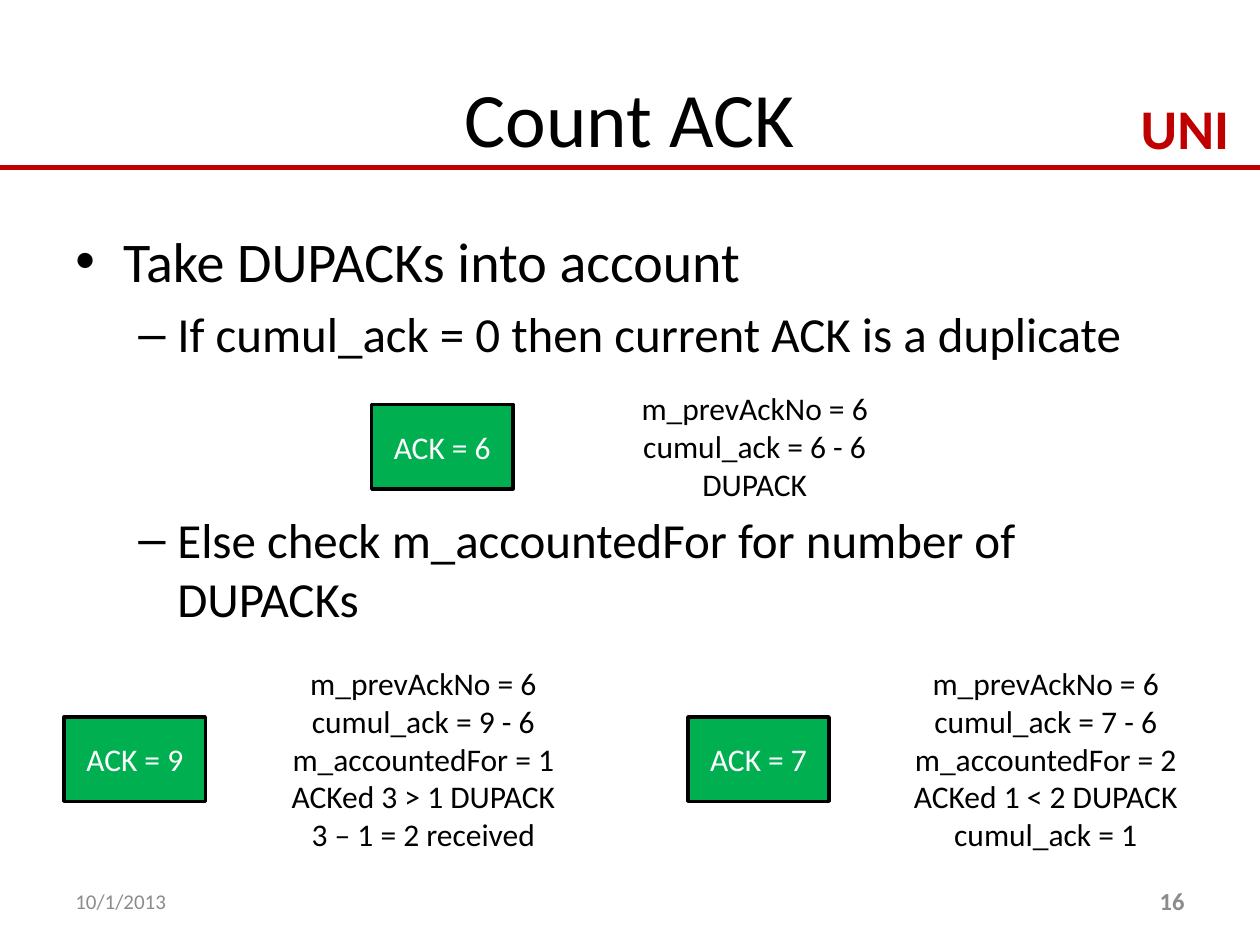
from dataclasses import dataclass

from lxml.etree import SubElement
from pptx import Presentation
from pptx.dml.color import RGBColor
from pptx.enum.shapes import MSO_CONNECTOR, MSO_SHAPE
from pptx.enum.text import MSO_ANCHOR, PP_ALIGN
from pptx.oxml.ns import qn
from pptx.util import Inches, Pt

FONT = "Calibri"
BLACK, WHITE, RED, GREEN, GRAY = "000000", "FFFFFF", "C00000", "00B050", "8C8C8C"


@dataclass
class Label:
    lines: list[str]
    left: float
    top: float
    width: float
    height: float
    size: int
    color: str = BLACK
    bold: bool = False
    align: PP_ALIGN = PP_ALIGN.CENTER
    anchor: MSO_ANCHOR = MSO_ANCHOR.TOP
    wrap: bool = True


@dataclass
class Bullet:
    text: str
    mark: str
    size: int
    indent: float
    hanging: float
    space_before: float


@dataclass
class Example:
    ack: int
    box_left: float
    box_top: float
    note_left: float
    note_top: float
    note_width: float
    note_height: float
    calculation: list[str]


def rgb(color: str) -> RGBColor:
    return RGBColor.from_string(color)


def add_run(paragraph, text: str, size: int, color: str, bold: bool = False) -> None:
    run = paragraph.add_run()
    run.text = text
    run.font.name = FONT
    run.font.size = Pt(size)
    run.font.bold = bold
    run.font.color.rgb = rgb(color)


def next_paragraph(frame, index: int):
    return frame.add_paragraph() if index else frame.paragraphs[0]


def add_label(slide, label: Label) -> None:
    shape = slide.shapes.add_textbox(Inches(label.left), Inches(label.top),
                                     Inches(label.width), Inches(label.height))
    frame = shape.text_frame
    frame.word_wrap = label.wrap
    frame.vertical_anchor = label.anchor
    for index, line in enumerate(label.lines):
        paragraph = next_paragraph(frame, index)
        paragraph.alignment = label.align
        add_run(paragraph, line, label.size, label.color, label.bold)


def add_bullets(slide, bullets: list[Bullet]) -> None:
    shape = slide.shapes.add_textbox(Inches(0.5), Inches(1.75), Inches(9), Inches(4.95))
    frame = shape.text_frame
    frame.word_wrap = True
    for index, bullet in enumerate(bullets):
        paragraph = next_paragraph(frame, index)
        paragraph.space_before = Pt(bullet.space_before)
        add_run(paragraph, bullet.text, bullet.size, BLACK)
        properties = paragraph._p.get_or_add_pPr()
        properties.set("marL", str(Inches(bullet.indent)))
        properties.set("indent", str(-Inches(bullet.hanging)))
        SubElement(properties, qn("a:buFont"), typeface="Arial")
        SubElement(properties, qn("a:buChar"), char=bullet.mark)


def add_ack_box(slide, text: str, left: float, top: float) -> None:
    shape = slide.shapes.add_shape(MSO_SHAPE.RECTANGLE, Inches(left), Inches(top),
                                   Inches(1.12), Inches(0.67))
    shape.shadow.inherit = False
    shape.fill.solid()
    shape.fill.fore_color.rgb = rgb(GREEN)
    shape.line.color.rgb = rgb(BLACK)
    shape.line.width = Pt(2)
    shape.text_frame.vertical_anchor = MSO_ANCHOR.MIDDLE
    paragraph = shape.text_frame.paragraphs[0]
    paragraph.alignment = PP_ALIGN.CENTER
    add_run(paragraph, text, 18, WHITE)


def add_example(slide, example: Example) -> None:
    """Draw an ACK box with its calculation beside it."""
    add_ack_box(slide, f"ACK = {example.ack}", example.box_left, example.box_top)
    add_label(slide, Label(["m_prevAckNo = 6", *example.calculation],
                           example.note_left, example.note_top,
                           example.note_width, example.note_height, 18, wrap=False))


def add_header_rule(slide) -> None:
    rule = slide.shapes.add_connector(MSO_CONNECTOR.STRAIGHT, Inches(0), Inches(1.33),
                                      Inches(10), Inches(1.33))
    rule.line.color.rgb = rgb(RED)
    rule.line.width = Pt(3.25)
    SubElement(rule._element.spPr, qn("a:effectLst"))


LABELS = [
    Label(["UNI"], 8.92, 0.69, 0.97, 0.64, 32, RED, True, wrap=False),
    Label(["Count ACK"], 0.5, 0.3, 9, 1.25, 44, anchor=MSO_ANCHOR.MIDDLE),
    Label(["10/1/2013"], 0.5, 6.95, 2.33, 0.4, 12, GRAY,
          align=PP_ALIGN.LEFT, anchor=MSO_ANCHOR.MIDDLE),
    Label(["16"], 7.17, 6.95, 2.33, 0.4, 14, GRAY, True,
          align=PP_ALIGN.RIGHT, anchor=MSO_ANCHOR.MIDDLE),
]

BULLETS = [
    Bullet("Take DUPACKs into account", "•", 32, 0.38, 0.38, 0),
    Bullet("If cumul_ack = 0 then current ACK is a duplicate", "–", 28, 0.81, 0.31, 5.6),
    Bullet("Else check m_accountedFor for number of DUPACKs", "–", 28, 0.81, 0.31, 84),
]

EXAMPLES = [
    Example(6, 2.95, 3.21, 4.98, 3.04, 2.02, 1.01, ["cumul_ack = 6 - 6", "DUPACK"]),
    Example(9, 0.51, 5.69, 2.2, 5.22, 2.32, 1.62,
            ["cumul_ack = 9 - 6", "m_accountedFor = 1",
             "ACKed 3 > 1 DUPACK", "3 – 1 = 2 received"]),
    Example(7, 5.46, 5.69, 7.15, 5.22, 2.3, 1.62,
            ["cumul_ack = 7 - 6", "m_accountedFor = 2",
             "ACKed 1 < 2 DUPACK", "cumul_ack = 1"]),
]


def main() -> None:
    presentation = Presentation()
    presentation.slide_width = Inches(10)
    presentation.slide_height = Inches(7.5)
    slide = presentation.slides.add_slide(presentation.slide_layouts[6])
    add_header_rule(slide)
    for label in LABELS:
        add_label(slide, label)
    add_bullets(slide, BULLETS)
    for example in EXAMPLES:
        add_example(slide, example)
    presentation.save("out.pptx")


if __name__ == "__main__":
    main()
